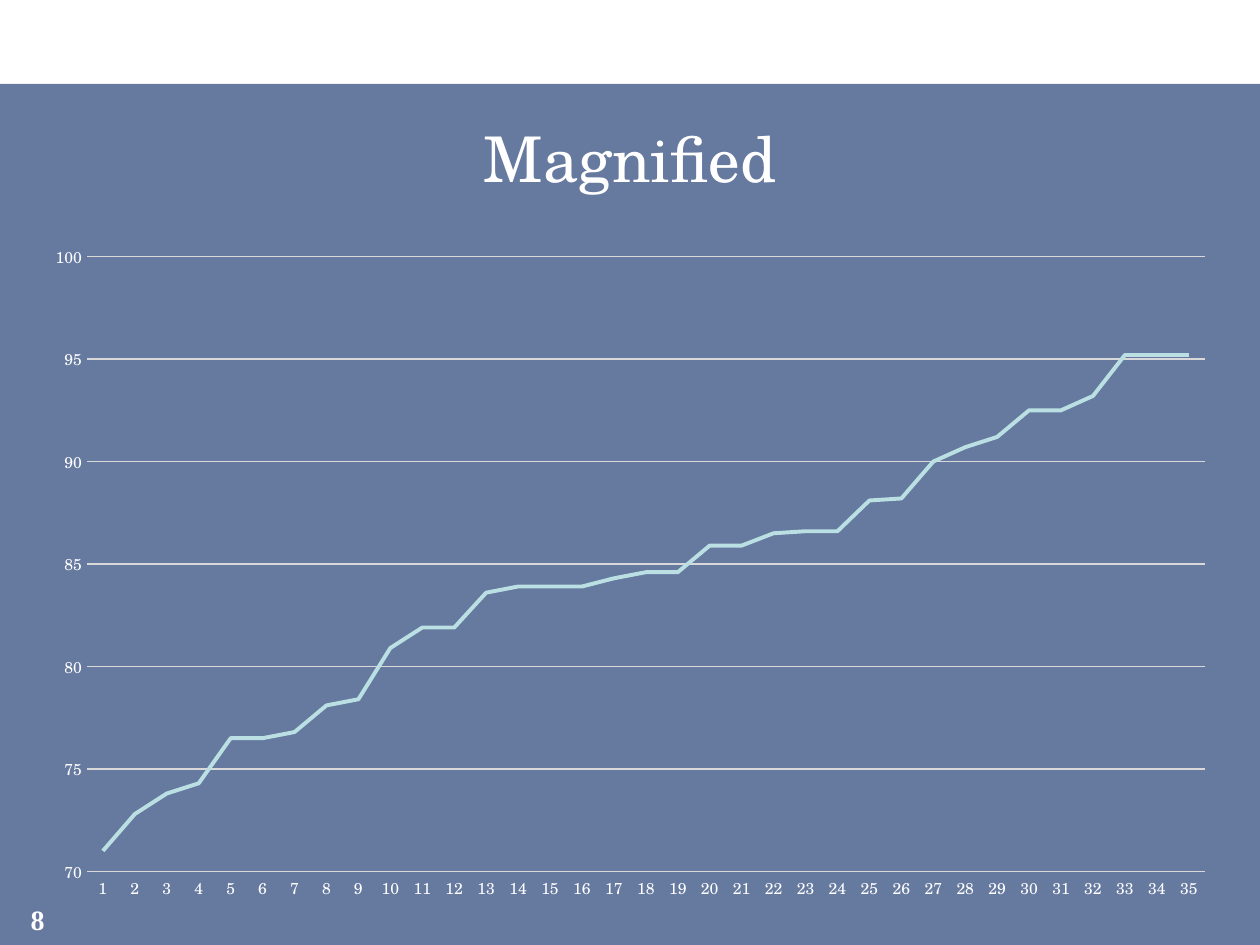
from lxml import etree
from pptx import Presentation
from pptx.chart.data import CategoryChartData
from pptx.dml.color import RGBColor
from pptx.enum.chart import XL_CHART_TYPE, XL_TICK_MARK
from pptx.enum.shapes import MSO_SHAPE
from pptx.enum.text import MSO_ANCHOR, PP_ALIGN
from pptx.oxml.ns import qn
from pptx.util import Cm, Pt

COLORS = {"panel": "002060", "text": "FFFFFF", "grid": "D9D9D9", "line": "BBE0E3"}
FONT = "TeX Gyre Schola"
NUMBER_FONT = "Times New Roman"
VALUES = [
    71, 72.8, 73.8, 74.3, 76.5, 76.5, 76.8, 78.1, 78.4, 80.9, 81.9, 81.9,
    83.6, 83.9, 83.9, 83.9, 84.3, 84.6, 84.6, 85.9, 85.9, 86.5, 86.6, 86.6,
    88.1, 88.2, 90, 90.7, 91.2, 92.5, 92.5, 93.2, 95.2, 95.2, 95.2,
]


def color(name):
    return RGBColor.from_string(COLORS[name])


def set_font(font, size, name=FONT, bold=False):
    font.size = Pt(size)
    font.name = name
    font.bold = bold
    font.color.rgb = color("text")


def set_line(line, name, width):
    line.color.rgb = color(name)
    line.width = Pt(width)


def add_panel(slide, box):
    shape = slide.shapes.add_shape(MSO_SHAPE.RECTANGLE, *box)
    shape.shadow.inherit = False
    shape.fill.solid()
    shape.fill.fore_color.rgb = color("panel")
    shape.line.fill.background()
    # 60 % opacity
    fill_color = shape.fill._xPr.find(qn("a:solidFill"))[0]
    etree.SubElement(fill_color, qn("a:alpha"), val="60000")


def add_text(slide, box, text, size, name=FONT, bold=False):
    frame = slide.shapes.add_textbox(*box).text_frame
    frame.word_wrap = True
    frame.vertical_anchor = MSO_ANCHOR.MIDDLE
    paragraph = frame.paragraphs[0]
    paragraph.alignment = PP_ALIGN.CENTER
    run = paragraph.add_run()
    run.text = text
    set_font(run.font, size, name, bold)


def add_line_chart(slide, box):
    data = CategoryChartData()
    data.categories = [str(number) for number in range(1, len(VALUES) + 1)]
    data.add_series("Series 1", VALUES)
    chart = slide.shapes.add_chart(XL_CHART_TYPE.LINE, *box, data).chart
    chart.has_title = False
    chart.has_legend = False
    set_font(chart.font, 10)

    # Axes
    for axis in (chart.category_axis, chart.value_axis):
        axis.major_tick_mark = XL_TICK_MARK.NONE
        axis.minor_tick_mark = XL_TICK_MARK.NONE
        set_font(axis.tick_labels.font, 9)
    set_line(chart.category_axis.format.line, "grid", 0.75)
    value_axis = chart.value_axis
    value_axis.minimum_scale = 70
    value_axis.maximum_scale = 100
    value_axis.major_unit = 5
    value_axis.format.line.fill.background()
    set_line(value_axis.major_gridlines.format.line, "grid", 0.75)

    # Series
    plot = chart.plots[0]
    plot.vary_by_categories = False
    series = plot.series[0]
    series.smooth = False
    set_line(series.format.line, "line", 2.25)


def main():
    presentation = Presentation()
    presentation.slide_width = Cm(25.4)
    presentation.slide_height = Cm(19.05)
    slide = presentation.slides.add_slide(presentation.slide_layouts[6])

    add_panel(slide, (0, Cm(1.69), Cm(25.4), Cm(17.36)))
    add_text(slide, (0, Cm(18.03), Cm(1.52), Cm(1.02)), "8", 16, NUMBER_FONT, True)
    add_text(slide, (Cm(0.64), Cm(2.12), Cm(24.13), Cm(2.12)), "Magnified", 36)
    add_line_chart(slide, (Cm(0.64), Cm(4.66), Cm(24.13), Cm(13.76)))

    presentation.save("out.pptx")


if __name__ == "__main__":
    main()
